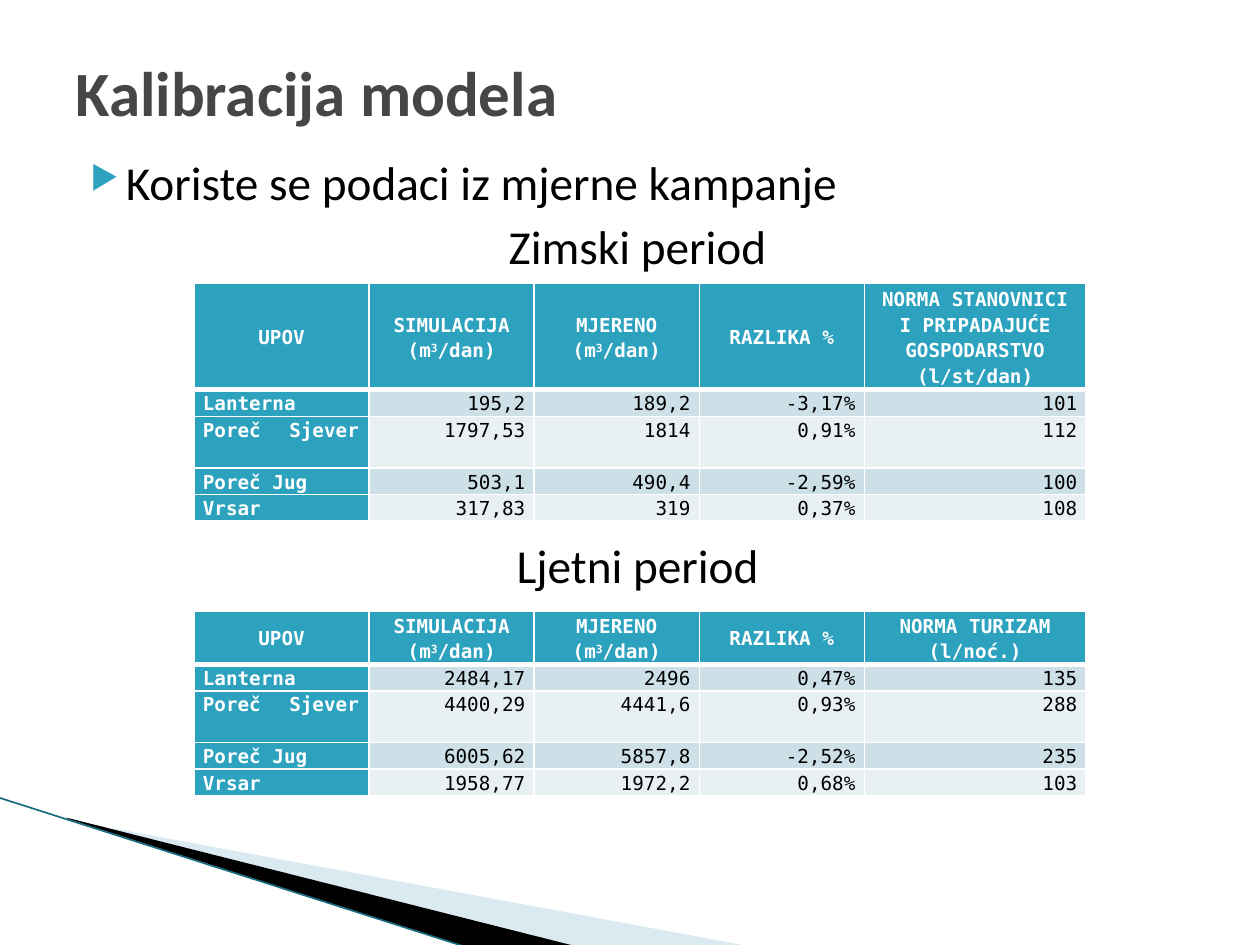
from dataclasses import dataclass

from lxml import etree
from pptx import Presentation
from pptx.dml.color import RGBColor
from pptx.enum.shapes import MSO_CONNECTOR
from pptx.enum.text import MSO_ANCHOR, PP_ALIGN
from pptx.oxml.ns import qn
from pptx.util import Inches, Pt

LEFT, CENTER, RIGHT = PP_ALIGN.LEFT, PP_ALIGN.CENTER, PP_ALIGN.RIGHT
TOP, MIDDLE = MSO_ANCHOR.TOP, MSO_ANCHOR.MIDDLE
STRAIGHT = MSO_CONNECTOR.STRAIGHT

WHITE = RGBColor(0xFF, 0xFF, 0xFF)
BLACK = RGBColor(0x00, 0x00, 0x00)
GREY = RGBColor(0x46, 0x46, 0x46)
TEAL = RGBColor(0x2D, 0xA2, 0xBF)
DARK_TEAL = RGBColor(0x1A, 0x6B, 0x80)
PALE_BLUE = RGBColor(0xA0, 0xCB, 0xDC)
BANDS = (RGBColor(0xCD, 0xE0, 0xE8), RGBColor(0xE8, 0xF0, 0xF4))

SANS = "Calibri"
MONO = "DejaVu Sans Mono"
COL_WIDTHS = (1.39, 1.31, 1.31, 1.31, 1.76)
ROW_HEIGHTS = (0.2, 0.41, 0.2, 0.2)
PLANTS = ("Lanterna", "Poreč\tSjever", "Poreč Jug", "Vrsar")


@dataclass(frozen=True)
class Run:
    text: str
    superscript: bool = False


@dataclass(frozen=True)
class Period:
    top: float
    header_height: float
    norm: tuple[str, ...]
    values: tuple[tuple[str, ...], ...]


@dataclass(frozen=True)
class Wedge:
    points: tuple[tuple[float, float], ...]
    color: RGBColor
    opacity: int = 100


PERIODS = (
    Period(2.25, 0.81,
           ("NORMA STANOVNICI I PRIPADAJUĆE GOSPODARSTVO", "(l/st/dan)"),
           (("195,2", "189,2", "-3,17%", "101"),
            ("1797,53", "1814", "0,91%", "112"),
            ("503,1", "490,4", "-2,59%", "100"),
            ("317,83", "319", "0,37%", "108"))),
    Period(4.85, 0.41,
           ("NORMA TURIZAM", "(l/noć.)"),
           (("2484,17", "2496", "0,47%", "135"),
            ("4400,29", "4441,6", "0,93%", "288"),
            ("6005,62", "5857,8", "-2,52%", "235"),
            ("1958,77", "1972,2", "0,68%", "103"))),
)

WEDGES = (
    Wedge(((0.55, 6.51), (5.95, 7.51), (4.56, 7.51), (0.55, 6.5)), PALE_BLUE, 40),
    Wedge(((0.53, 6.49), (4.57, 7.51), (3.72, 7.52), (0.54, 6.5)), BLACK),
)


def add_run(p, run: Run, font: str, size: float, color: RGBColor, bold: bool = False) -> None:
    r = p.add_run()
    r.text = run.text
    r.font.name = font
    r.font.size = Pt(size)
    r.font.bold = bold
    r.font.color.rgb = color
    if run.superscript:
        r.font._element.set("baseline", "30000")


def add_wedge(slide, wedge: Wedge) -> None:
    points = [(Inches(x), Inches(y)) for x, y in wedge.points]
    builder = slide.shapes.build_freeform(*points[0])
    builder.add_line_segments(points[1:], close=True)
    sp = builder.convert_to_shape()
    sp.shadow.inherit = False
    sp.line.fill.background()
    sp.fill.solid()
    sp.fill.fore_color.rgb = wedge.color
    if wedge.opacity < 100:
        color = sp._element.spPr.find(f".//{qn('a:srgbClr')}")
        etree.SubElement(color, qn("a:alpha"), val=str(wedge.opacity * 1000))


def add_edge(slide) -> None:
    line = slide.shapes.add_connector(
        STRAIGHT, Inches(-0.01), Inches(6.33), Inches(3.71), Inches(7.52))
    line.line.color.rgb = DARK_TEAL
    line.line.width = Pt(0.95)
    etree.SubElement(line._element.spPr, qn("a:effectLst"))


def add_bullet(p) -> None:
    pPr = p._p.get_or_add_pPr()
    pPr.set("marL", str(Inches(0.4)))
    pPr.set("indent", str(Inches(-0.28)))
    color = etree.SubElement(pPr, qn("a:buClr"))
    etree.SubElement(color, qn("a:srgbClr"), val=str(TEAL))
    etree.SubElement(pPr, qn("a:buSzPct"), val="68000")
    etree.SubElement(pPr, qn("a:buChar"), char="▶")


def add_body(slide) -> None:
    sp = slide.shapes.add_textbox(Inches(0.5), Inches(1.17), Inches(9), Inches(5.4))
    tf = sp.text_frame
    tf.word_wrap = True
    p = tf.paragraphs[0]
    add_bullet(p)
    add_run(p, Run("Koriste se podaci iz mjerne kampanje"), SANS, 27, BLACK)
    for text, space in (("Zimski period", 4), ("Ljetni period", 150)):
        p = tf.add_paragraph()
        p._p.get_or_add_pPr().set("marL", str(Inches(0.12)))
        p.alignment = CENTER
        p.space_before = Pt(space)
        add_run(p, Run(text), SANS, 27, BLACK)


def set_borders(cell, top: int, bottom: int) -> None:
    tcPr = cell._tc.get_or_add_tcPr()
    for side, width in (("L", 1), ("R", 1), ("T", top), ("B", bottom)):
        ln = etree.SubElement(tcPr, qn(f"a:ln{side}"), w=str(Pt(width)))
        fill = etree.SubElement(ln, qn("a:solidFill"))
        etree.SubElement(fill, qn("a:srgbClr"), val=str(WHITE))


def fill_cell(cell, paragraphs: list[list[Run]], align, anchor, fill: RGBColor,
              color: RGBColor, bold: bool) -> None:
    cell.margin_left = cell.margin_right = Inches(0.07)
    cell.margin_top = cell.margin_bottom = 0
    cell.vertical_anchor = anchor
    cell.fill.solid()
    cell.fill.fore_color.rgb = fill
    tf = cell.text_frame
    for i, runs in enumerate(paragraphs):
        p = tf.add_paragraph() if i else tf.paragraphs[0]
        if any("\t" in run.text for run in runs):
            tabs = etree.SubElement(p._p.get_or_add_pPr(), qn("a:tabLst"))
            etree.SubElement(tabs, qn("a:tab"), pos=str(Inches(1.24)), algn="r")
        p.alignment = align
        p.line_spacing = 1.15
        for run in runs:
            add_run(p, run, MONO, 11, color, bold)


def add_period_table(slide, period: Period) -> None:
    heights = (period.header_height, *ROW_HEIGHTS)
    frame = slide.shapes.add_table(
        len(heights), len(COL_WIDTHS), Inches(1.54), Inches(period.top),
        Inches(sum(COL_WIDTHS)), Inches(sum(heights)))
    table = frame.table
    for column, width in zip(table.columns, COL_WIDTHS):
        column.width = Inches(width)
    for row, height in zip(table.rows, heights):
        row.height = Inches(height)

    flow = [[[Run(f"{name} (m"), Run("3", True), Run("/dan)")]]
            for name in ("SIMULACIJA", "MJERENO")]
    headers = [[[Run("UPOV")]], *flow, [[Run("RAZLIKA %")]],
               [[Run(text)] for text in period.norm]]
    for c, paragraphs in enumerate(headers):
        cell = table.cell(0, c)
        set_borders(cell, 1, 3)
        fill_cell(cell, paragraphs, CENTER, MIDDLE, TEAL, WHITE, True)

    for r, (plant, values) in enumerate(zip(PLANTS, period.values), 1):
        for c, text in enumerate((plant, *values)):
            cell = table.cell(r, c)
            set_borders(cell, 3 if r == 1 else 1, 1)
            if c == 0:
                fill_cell(cell, [[Run(text)]], LEFT, TOP, TEAL, WHITE, True)
            else:
                fill_cell(cell, [[Run(text)]], RIGHT, TOP, BANDS[(r - 1) % 2], BLACK, False)


def add_title(slide) -> None:
    title = slide.shapes.title
    title.left, title.top = Inches(0.5), Inches(0.3)
    title.width, title.height = Inches(9), Inches(0.85)
    tf = title.text_frame
    tf.vertical_anchor = MIDDLE
    p = tf.paragraphs[0]
    p.alignment = LEFT
    add_run(p, Run("Kalibracija modela"), SANS, 36, GREY, True)


def main() -> None:
    prs = Presentation()
    prs.slide_width, prs.slide_height = Inches(10), Inches(7.5)
    slide = prs.slides.add_slide(prs.slide_layouts[5])
    for wedge in WEDGES:
        add_wedge(slide, wedge)
    add_edge(slide)
    add_body(slide)
    add_title(slide)
    for period in PERIODS:
        add_period_table(slide, period)
    prs.save("out.pptx")


if __name__ == "__main__":
    main()
